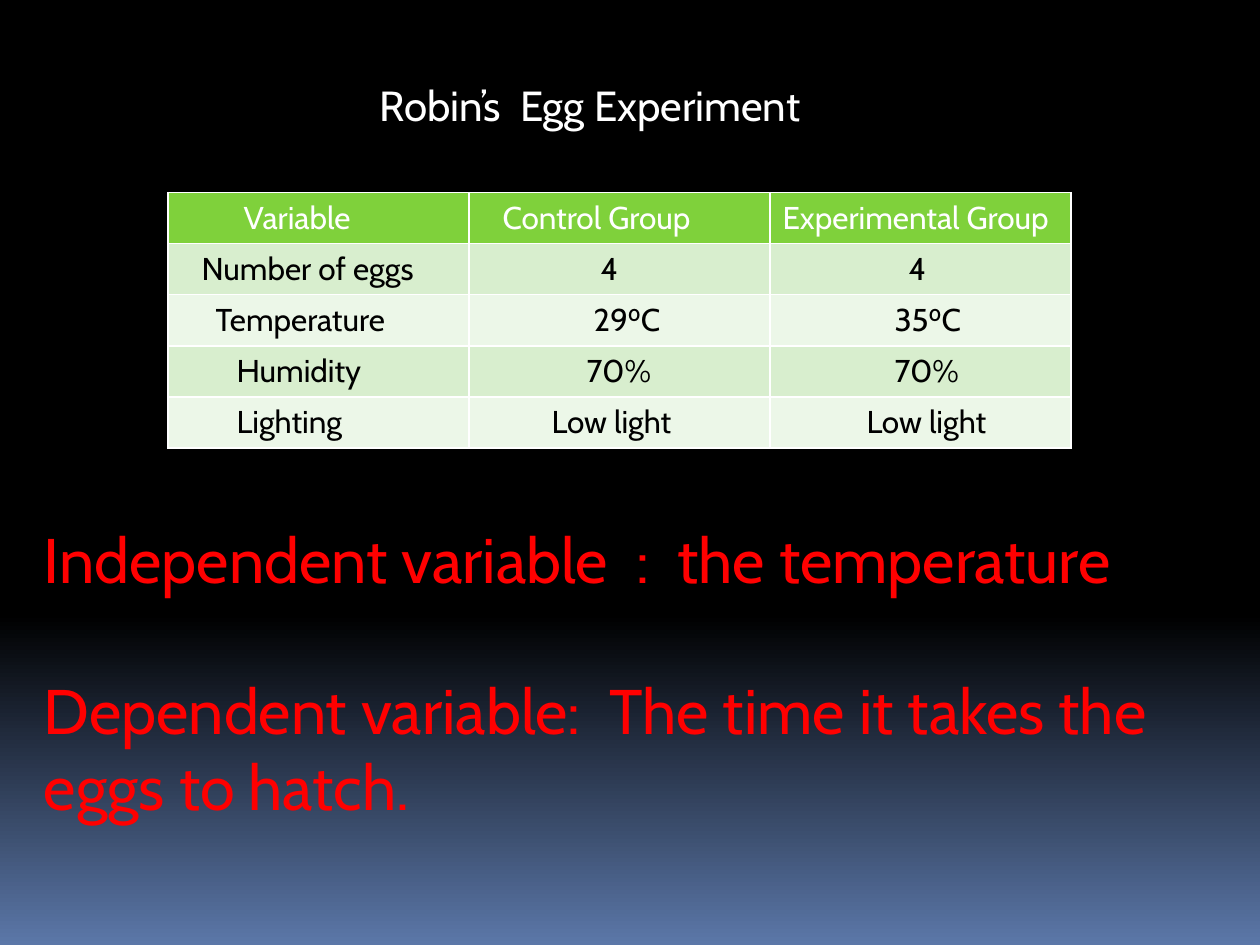
from copy import deepcopy
from lxml.etree import SubElement
from pptx import Presentation
from pptx.dml.color import RGBColor
from pptx.oxml.ns import qn
from pptx.util import Pt

BLACK = RGBColor(0x00, 0x00, 0x00)
WHITE = RGBColor(0xFF, 0xFF, 0xFF)
RED = RGBColor(0xFF, 0x00, 0x00)
BLUE = RGBColor(0x5B, 0x77, 0xA8)
GREEN = RGBColor(0x7F, 0xD1, 0x3B)
BANDS = RGBColor(0xEC, 0xF7, 0xE8), RGBColor(0xD8, 0xEE, 0xCE)
FONT = "Cabin"
PAD = 7.2

STOPS = [(0, BLACK), (0.65, BLACK), (1, BLUE)]
TITLE = ["Robin’s  Egg Experiment"]
NOTES = [
    "Independent variable  :  the temperature",
    "Dependent variable:  The time it takes the eggs to hatch.",
]
ROWS = [
    [("Variable", 36), ("Control Group", 12), ("Experimental Group", 0)],
    [("Number of eggs", 12), ("4", 68), ("4", 72)],
    [("Temperature", 20), ("29⁰C", 64), ("35⁰C", 64)],
    [("Humidity", 32), ("70%", 60), ("70%", 64)],
    [("Lighting", 32), ("Low light", 40), ("Low light", 48)],
]
LEFT, TOP, COL, ROW = 96, 110, 172, 29.2


def write(par, text, size, color):
    run = par.add_run()
    run.text = text
    run.font.name = FONT
    run.font.size = Pt(size)
    run.font.color.rgb = color


def add_text(slide, box, lines, size, color, gap=0):
    frame = slide.shapes.add_textbox(*map(Pt, box)).text_frame
    frame.word_wrap = True
    for i, line in enumerate(lines):
        par = frame.add_paragraph() if i else frame.paragraphs[0]
        if i:
            par.space_before = Pt(gap)
        write(par, line, size, color)


def add_edges(cell):
    props = cell._tc.get_or_add_tcPr()
    for side in ("lnL", "lnR", "lnT", "lnB"):
        line = SubElement(props, qn("a:" + side), w=str(Pt(1)))
        fill = SubElement(line, qn("a:solidFill"))
        SubElement(fill, qn("a:srgbClr"), val=str(WHITE))


def add_grid(slide):
    count, width = len(ROWS), len(ROWS[0])
    area = map(Pt, (LEFT, TOP, COL * width, ROW * count))
    table = slide.shapes.add_table(count, width, *area).table
    for r, row in enumerate(ROWS):
        for c, (text, inset) in enumerate(row):
            cell = table.cell(r, c)
            cell.margin_left = Pt(PAD + inset)
            add_edges(cell)
            cell.fill.solid()
            cell.fill.fore_color.rgb = BANDS[r % 2] if r else GREEN
            par = cell.text_frame.paragraphs[0]
            write(par, text, 18, BLACK if r else WHITE)
            par.runs[0].font.bold = False


def paint(slide):
    fill = slide.background.fill
    fill.gradient()
    fill.gradient_angle = 270
    stops = slide.element.xpath(".//a:gsLst")[0]
    stops.append(deepcopy(stops[0]))
    for stop, (place, color) in zip(fill.gradient_stops, STOPS):
        stop.position = place
        stop.color.rgb = color


def main():
    deck = Presentation()
    deck.slide_width, deck.slide_height = Pt(720), Pt(540)
    slide = deck.slides.add_slide(deck.slide_layouts[6])
    paint(slide)
    add_grid(slide)
    add_text(slide, (210, 42, 258.5, 36), TITLE, 24, WHITE)
    add_text(slide, (18, 294, 684, 181.5), NOTES, 36, RED, 43)
    deck.save("out.pptx")


if __name__ == "__main__":
    main()
